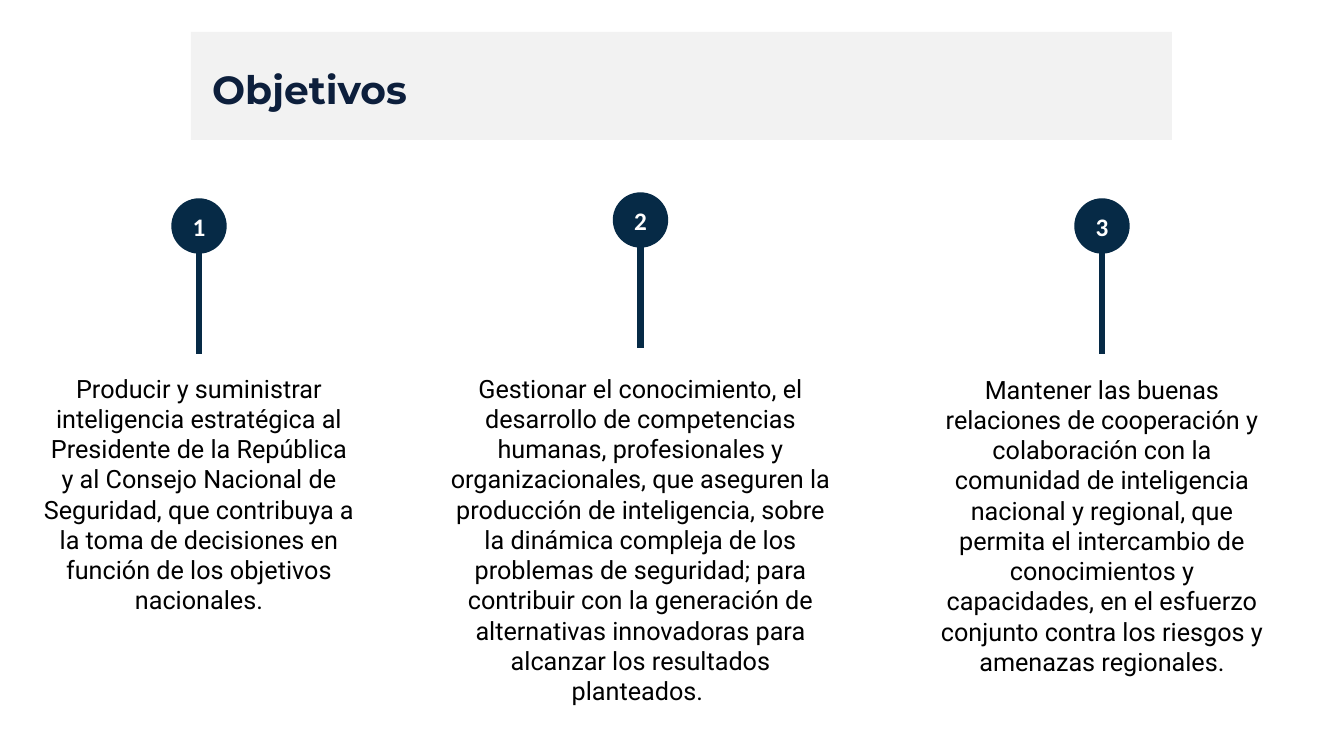
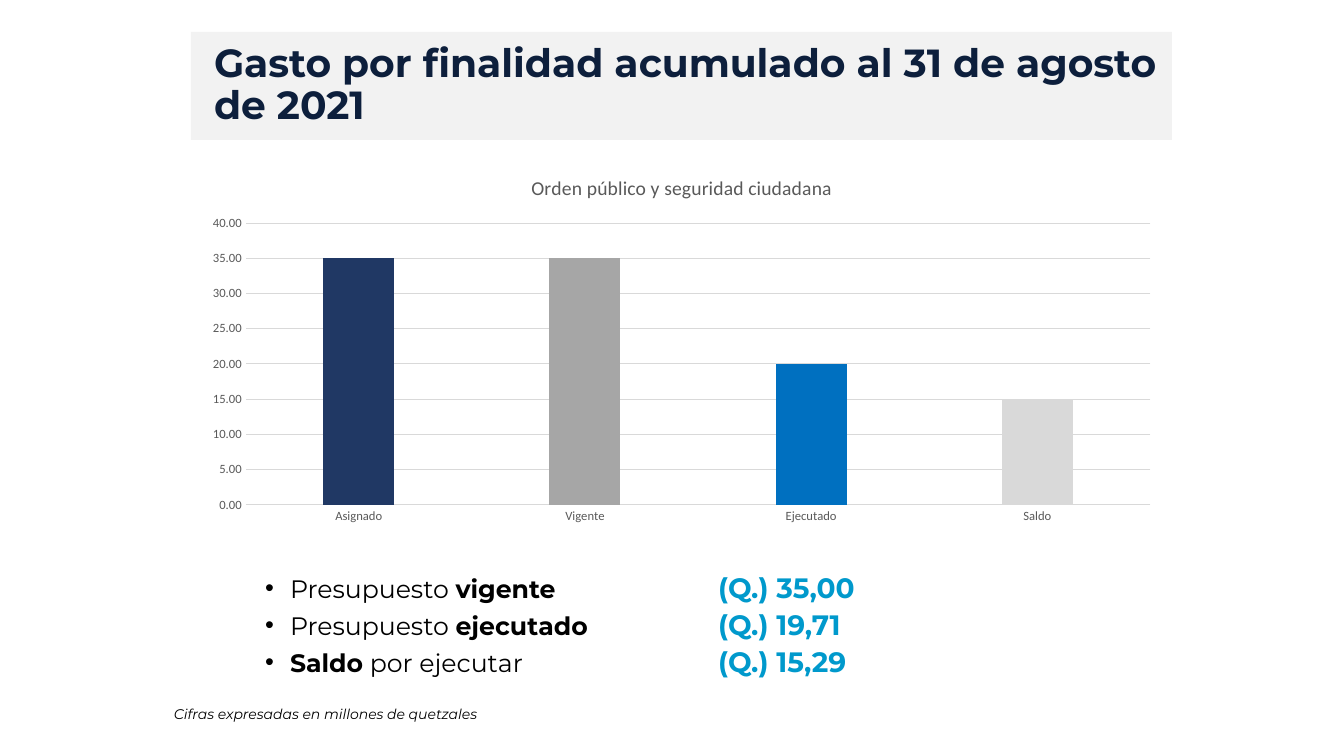
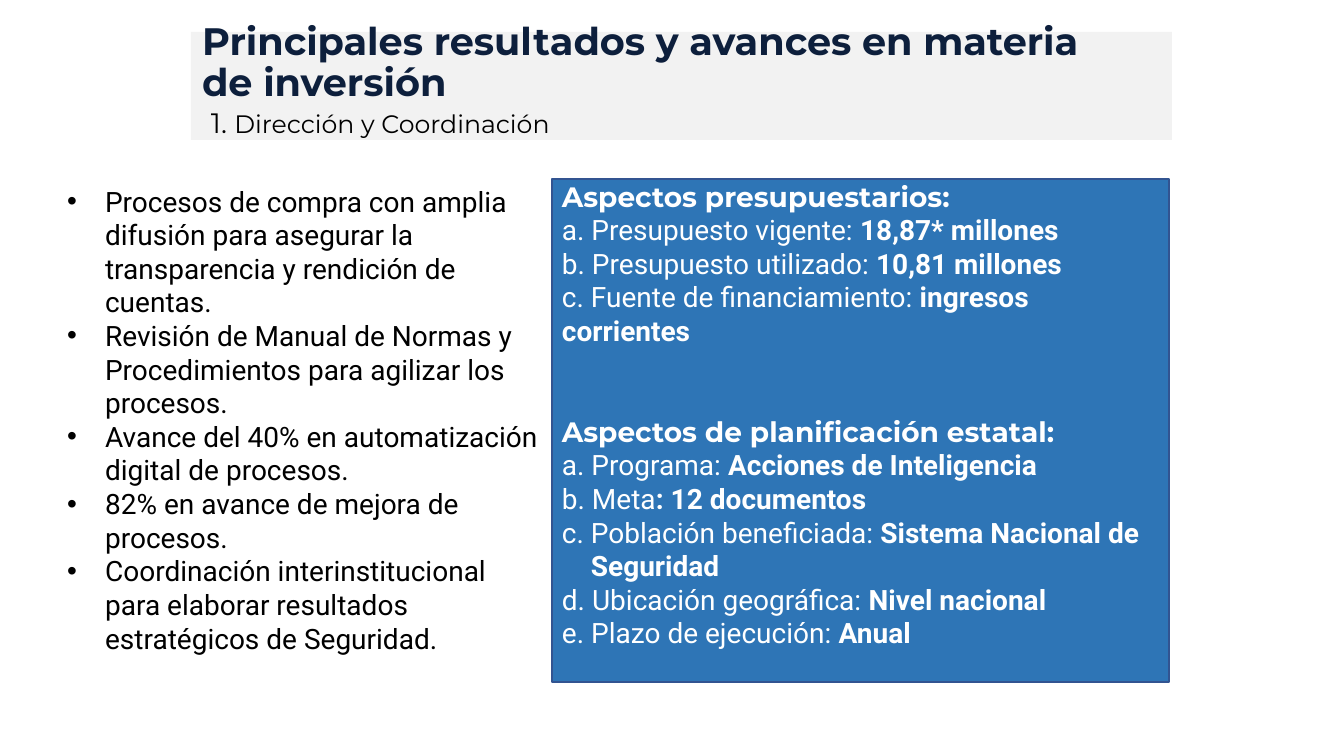
from lxml.etree import SubElement
from pptx import Presentation
from pptx.chart.data import CategoryChartData
from pptx.dml.color import RGBColor
from pptx.enum.chart import XL_CHART_TYPE as ChartType, XL_TICK_MARK as Tick
from pptx.enum.shapes import MSO_CONNECTOR as Connector, MSO_SHAPE as Shape
from pptx.enum.text import MSO_ANCHOR as Anchor, MSO_AUTO_SIZE as AutoSize, PP_ALIGN as Align
from pptx.oxml.ns import qn
from pptx.util import Emu, Pt

SLIDE_W, SLIDE_H = 1344, 756
SCALE = 12192000 / SLIDE_W

NAVY, PIN, BAND, BLACK, WHITE = "0D1F3C", "062A46", "F2F2F2", "000000", "FFFFFF"
CYAN, PANEL, PANEL_EDGE, GRAY, GRID = "0099CC", "2E75B6", "325491", "595959", "D9D9D9"
HEAD, BODY, DATA = "Montserrat", "Roboto", "Calibri"
TITLE_ONLY, TITLE_AND_LIST = 5, 1


def px(length):
    return Emu(round(length * SCALE))


def rgb(color):
    return RGBColor.from_string(color)


def place(item, box):
    item.left, item.top, item.width, item.height = map(px, box)


def style(font, size, face, color, bold=False, italic=False):
    font.size, font.name, font.bold, font.italic = Pt(size), face, bold, italic
    font.color.rgb = rgb(color)


def add_run(paragraph, text, *look, **flags):
    run = paragraph.add_run()
    run.text = text
    style(run.font, *look, **flags)


def next_paragraph(frame):
    first = frame.paragraphs[0]
    return frame.add_paragraph() if first.runs else first


def indent(paragraph, left, hanging, bullet=None, tab=None):
    props = paragraph._p.get_or_add_pPr()
    props.set("marL", str(px(left)))
    props.set("indent", str(-px(hanging)))
    if bullet:
        SubElement(props, qn("a:buFont"), typeface="Arial")
        SubElement(props, qn("a:buChar"), char=bullet)
    if tab:
        stops = SubElement(props, qn("a:tabLst"))
        SubElement(stops, qn("a:tab"), pos=str(px(tab)), algn="l")


def paint(block, fill, edge=None):
    block.fill.solid()
    block.fill.fore_color.rgb = rgb(fill)
    if edge:
        block.line.color.rgb = rgb(edge)
        block.line.width = Pt(1)
    else:
        block.line.fill.background()


def add_block(slide, kind, box, fill, edge=None):
    block = slide.shapes.add_shape(kind, *map(px, box))
    block.shadow.inherit = False
    paint(block, fill, edge)
    return block


def add_text(slide, box, wrap=True):
    frame = slide.shapes.add_textbox(*map(px, box)).text_frame
    frame.word_wrap = wrap
    return frame


def add_titled_slide(prs, layout, title, box, size=28):
    """Slide with the gray band behind its title."""
    slide = prs.slides.add_slide(prs.slide_layouts[layout])
    band = add_block(slide, Shape.RECTANGLE, (191, 32, 981, 108), BAND)
    slide.shapes._spTree.insert(2, band._element)
    place(slide.shapes.title, box)
    frame = slide.shapes.title.text_frame
    frame.auto_size, frame.vertical_anchor = AutoSize.NONE, Anchor.MIDDLE
    heading = frame.paragraphs[0]
    heading.alignment, heading.line_spacing = Align.LEFT, 0.9
    add_run(heading, title, size, HEAD, NAVY, bold=True)
    return slide


def list_frame(slide, box):
    place(slide.placeholders[1], box)
    frame = slide.placeholders[1].text_frame
    frame.auto_size, frame.vertical_anchor = AutoSize.NONE, Anchor.TOP
    return frame


# Objectives
def add_objective(slide, box, pin_top, number, text):
    """Numbered pin centred above the text box."""
    left, _, width, _ = box
    disc, stem = 54, 101
    center = left + width / 2

    line = slide.shapes.add_connector(
        Connector.STRAIGHT, px(center), px(pin_top + disc),
        px(center), px(pin_top + disc + stem))
    line.line.color.rgb = rgb(PIN)
    line.line.width = Pt(4.5)
    SubElement(line._element.spPr, qn("a:effectLst"))

    head = add_block(slide, Shape.OVAL, (center - disc / 2, pin_top, disc, disc), PIN, PIN)
    label = head.text_frame
    label.margin_left = label.margin_right = label.margin_top = label.margin_bottom = 0
    label.vertical_anchor = Anchor.MIDDLE
    label.paragraphs[0].alignment = Align.CENTER
    add_run(label.paragraphs[0], str(number), 18, DATA, WHITE, bold=True)

    goal = add_text(slide, box).paragraphs[0]
    goal.alignment = Align.CENTER
    add_run(goal, text, 18, BODY, BLACK)


def objectives_slide(prs):
    slide = add_titled_slide(prs, TITLE_ONLY, "Objetivos", (202, 62, 757, 60))
    objectives = [
        ((32, 368, 334, 254), 199,
         "Producir y suministrar inteligencia estratégica al Presidente de la República y al "
         "Consejo Nacional de Seguridad, que contribuya a la toma de decisiones en función de "
         "los objetivos nacionales."),
        ((439, 368, 403, 346), 193,
         "Gestionar el conocimiento, el desarrollo de competencias humanas, profesionales y "
         "organizacionales, que aseguren la producción de inteligencia, sobre la dinámica "
         "compleja de los problemas de seguridad; para contribuir con la generación de "
         "alternativas innovadoras para alcanzar los resultados planteados. "),
        ((924, 369, 356, 315), 199,
         "Mantener las buenas relaciones de cooperación y colaboración con la comunidad de "
         "inteligencia nacional y regional, que permita el intercambio de conocimientos y "
         "capacidades, en el esfuerzo conjunto contra los riesgos y amenazas regionales."),
    ]
    for number, (box, pin_top, text) in enumerate(objectives, 1):
        add_objective(slide, box, pin_top, number, text)


# Spending
def set_layout(parent, inner=False, **fractions):
    """Fixed position inside the chart, as fractions of its size."""
    layout = parent.find(qn("c:layout"))
    if layout is None:
        layout = parent.makeelement(qn("c:layout"))
        parent.insert(0, layout)
    manual = SubElement(layout, qn("c:manualLayout"))
    if inner:
        SubElement(manual, qn("c:layoutTarget"), val="inner")
    for mode in ("xMode", "yMode"):
        SubElement(manual, qn("c:" + mode), val="edge")
    for name, value in fractions.items():
        SubElement(manual, qn("c:" + name), val=str(value))


def add_spending_chart(slide, box):
    spending = CategoryChartData(number_format="0.00,,")
    spending.categories = ["Asignado", "Vigente", "Ejecutado", "Saldo"]
    spending.add_series("Series 1", [35000000, 35000000, 20000000, 15000000])
    chart = slide.shapes.add_chart(ChartType.COLUMN_CLUSTERED, *map(px, box), spending).chart
    style(chart.font, 10, DATA, BLACK)
    chart.has_legend = False

    chart.has_title = True
    add_run(chart.chart_title.text_frame.paragraphs[0],
            "Orden público y seguridad ciudadana", 14, DATA, GRAY)
    set_layout(chart.chart_title._element, x=0.34, y=0.03)
    set_layout(chart._chartSpace.chart.plotArea, inner=True, x=0.05, y=0.17, w=0.93, h=0.76)

    for axis in (chart.category_axis, chart.value_axis):
        axis.major_tick_mark = axis.minor_tick_mark = Tick.NONE
        style(axis.tick_labels.font, 9, DATA, GRAY)
    amounts = chart.value_axis
    amounts.minimum_scale, amounts.maximum_scale, amounts.major_unit = 0, 40000000, 5000000
    amounts.tick_labels.number_format = "0.00,,"
    amounts.tick_labels.number_format_is_linked = False
    amounts.format.line.fill.background()
    for rule in (chart.category_axis.format.line, amounts.major_gridlines.format.line):
        rule.color.rgb = rgb(GRID)
        rule.width = Pt(0.75)

    plot = chart.plots[0]
    plot.gap_width, plot.vary_by_categories = 219, False
    for index, color in enumerate(["203864", "A6A6A6", "0070C0", "D9D9D9"]):
        fill = plot.series[0].points[index].format.fill
        fill.solid()
        fill.fore_color.rgb = rgb(color)


def add_budget_list(slide, box):
    frame = list_frame(slide, box)
    lines = [
        ([("Presupuesto ", False), ("vigente", True)], "35,00"),
        ([("Presupuesto ", False), ("ejecutado", True)], "19,71"),
        ([("Saldo", True), (" por ejecutar", False)], "15,29"),
    ]
    for index, (words, amount) in enumerate(lines):
        line = next_paragraph(frame)
        line.level, line.line_spacing = 1, 0.9
        line.space_before = Pt(5 if index else 0)
        indent(line, 76, 25, "•", tab=504)
        for text, bold in words:
            add_run(line, text, 18, HEAD, BLACK, bold=bold)
        add_run(line, "\t(Q.) " + amount, 20, HEAD, CYAN, bold=True)


def spending_slide(prs):
    slide = add_titled_slide(prs, TITLE_AND_LIST,
                             "Gasto por finalidad acumulado al 31 de agosto de 2021",
                             (204, 51, 965, 69))
    add_spending_chart(slide, (197, 160, 973, 371))
    add_budget_list(slide, (204, 569, 965, 130))
    note = add_text(slide, (164, 701, 328, 27), wrap=False)
    add_run(note.paragraphs[0], "Cifras expresadas en millones de quetzales",
            10, HEAD, BLACK, italic=True)


# Results
def add_results_list(slide, box):
    frame = list_frame(slide, box)
    paint(slide.placeholders[1], WHITE, WHITE)
    for text in [
        "Procesos de compra con amplia difusión para asegurar la transparencia y rendición "
        "de cuentas.",
        "Revisión de Manual de Normas y Procedimientos para agilizar los procesos.",
        "Avance del 40% en automatización digital de procesos.",
        "82% en avance de mejora de procesos.",
        "Coordinación interinstitucional para elaborar resultados estratégicos de Seguridad.",
    ]:
        result = next_paragraph(frame)
        result.space_before = Pt(0)
        indent(result, 38, 38, "•")
        add_run(result, text, 20, BODY, BLACK)


def add_aspects_panel(slide, box):
    frame = add_block(slide, Shape.RECTANGLE, box, PANEL, PANEL_EDGE).text_frame
    frame.word_wrap, frame.vertical_anchor, frame.margin_top = True, Anchor.TOP, 0
    aspects = {
        "Aspectos presupuestarios:": [
            ("a. Presupuesto vigente: ", "18,87* millones"),
            ("b. Presupuesto utilizado: ", "10,81 millones"),
            ("c. Fuente de financiamiento: ", "ingresos corrientes"),
        ],
        "Aspectos de planificación estatal:": [
            ("a. Programa: ", "Acciones de Inteligencia"),
            ("b. Meta", ": 12 documentos"),
            ("c. Población beneficiada: ", "Sistema Nacional de Seguridad"),
            ("d. Ubicación geográfica: ", "Nivel nacional"),
            ("e. Plazo de ejecución: ", "Anual"),
        ],
    }
    for group, (heading, items) in enumerate(aspects.items()):
        title = next_paragraph(frame)
        title.alignment = Align.LEFT
        if group:
            title.space_before = Pt(48)
        add_run(title, heading, 20, HEAD, WHITE, bold=True)
        for label, value in items:
            item = next_paragraph(frame)
            item.alignment = Align.LEFT
            if group:
                indent(item, 29, 29)
            add_run(item, label, 20, BODY, WHITE)
            add_run(item, value, 20, BODY, WHITE, bold=True)


def results_slide(prs):
    slide = add_titled_slide(prs, TITLE_AND_LIST,
                             "Principales resultados y avances en materia de inversión",
                             (192, 0, 901, 127), 27.3)
    section = add_text(slide, (201, 104, 535, 40)).paragraphs[0]
    section.line_spacing = 0.9
    add_run(section, "1. ", 20, HEAD, BLACK)
    add_run(section, "Dirección y Coordinación", 18, HEAD, BLACK)
    add_results_list(slide, (57, 179, 495, 519))
    add_aspects_panel(slide, (552, 179, 617, 503))


def main():
    prs = Presentation()
    prs.slide_width, prs.slide_height = px(SLIDE_W), px(SLIDE_H)
    objectives_slide(prs)
    spending_slide(prs)
    results_slide(prs)
    prs.save("out.pptx")


if __name__ == "__main__":
    main()
